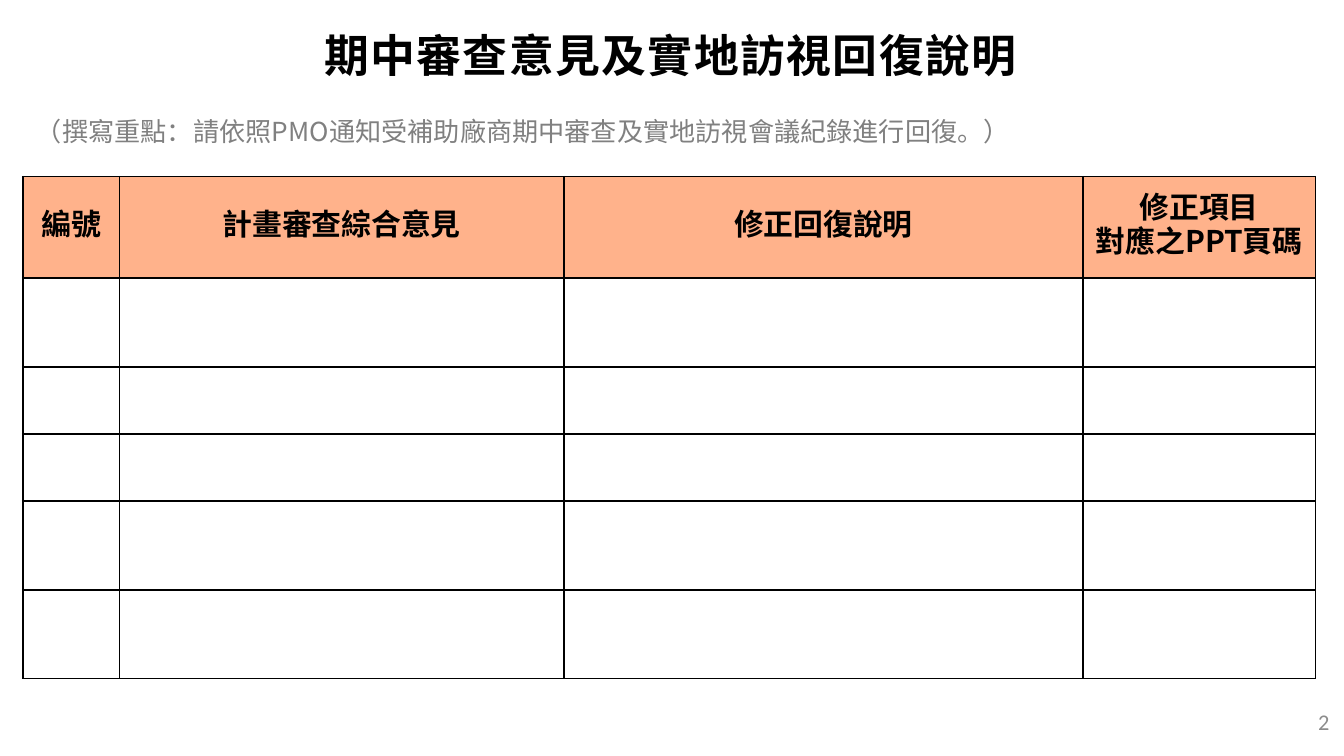
"""Build the interim review response slide with its blank reply table."""
from lxml.etree import SubElement
from pptx import Presentation
from pptx.dml.color import RGBColor
from pptx.enum.text import MSO_ANCHOR, MSO_AUTO_SIZE, PP_ALIGN
from pptx.oxml.ns import qn
from pptx.util import Pt

BLACK = RGBColor(0x00, 0x00, 0x00)
GRAY = RGBColor(0x80, 0x80, 0x80)
PAGE_GRAY = RGBColor(0x8C, 0x8C, 0x8C)
PEACH = RGBColor(0xFF, 0xB2, 0x8B)
CJK = "Noto Sans CJK SC"


def add_run(paragraph, text, size, color, bold=False, typeface=CJK):
    run = paragraph.add_run()
    run.text = text
    run.font.size = Pt(size)
    run.font.bold = bold
    run.font.color.rgb = color
    run.font.name = typeface
    SubElement(run.font._element, qn("a:ea"), typeface=typeface)
    return run


def add_borders(cell):
    properties = cell._tc.get_or_add_tcPr()
    for position, side in enumerate(("a:lnL", "a:lnR", "a:lnT", "a:lnB")):
        border = SubElement(properties, qn(side), w=str(Pt(1)))
        fill = SubElement(border, qn("a:solidFill"))
        SubElement(fill, qn("a:srgbClr"), val=str(BLACK))
        properties.insert(position, border)


prs = Presentation()
prs.slide_width, prs.slide_height = Pt(720), Pt(405)
slide = prs.slides.add_slide(prs.slide_layouts[6])

page_number = slide.shapes.add_textbox(Pt(557.3), Pt(375.8), Pt(162), Pt(21.6)).text_frame
page_number.word_wrap = True
page_number.vertical_anchor = MSO_ANCHOR.MIDDLE
page_number.paragraphs[0].alignment = PP_ALIGN.RIGHT
add_run(page_number.paragraphs[0], "2", 12, PAGE_GRAY, typeface="Calibri")

guidance = slide.shapes.add_textbox(Pt(12.2), Pt(58.3), Pt(692.6), Pt(24.5)).text_frame
guidance.word_wrap = True
guidance.auto_size = MSO_AUTO_SIZE.SHAPE_TO_FIT_TEXT
add_run(guidance.paragraphs[0],
        "（撰寫重點：請依照PMO通知受補助廠商期中審查及實地訪視會議紀錄進行回復。）", 14, GRAY)

title = slide.shapes.add_textbox(Pt(-0.7), Pt(-1.4), Pt(720), Pt(61.2)).text_frame
title.word_wrap = True
title.vertical_anchor = MSO_ANCHOR.MIDDLE
title.margin_left = title.margin_right = Pt(5)
title.margin_top = title.margin_bottom = Pt(2.9)
title.paragraphs[0].alignment = PP_ALIGN.CENTER
title_run = add_run(title.paragraphs[0], "期中審查意見及實地訪視回復說明", 24, BLACK, bold=True)
title_run.font._element.set("spc", "80")

columns = [
    (51.8, ["編號"], 1.4),
    (238.3, ["計畫審查綜合意見"], 1.4),
    (277.9, ["修正回復說明"], 1.4),
    (124.6, ["修正項目", "對應之PPT頁碼"], 0.7),
]
row_heights = [54.5, 47.5, 36, 36, 47.5, 47.5]
replies = slide.shapes.add_table(
    len(row_heights), len(columns), Pt(12.2), Pt(94.6), Pt(692.6), Pt(sum(row_heights))).table
replies.first_row = replies.horz_banding = False

for row, height in zip(replies.rows, row_heights):
    row.height = Pt(height)
    for cell in row.cells:
        cell.fill.background()
        add_borders(cell)

for index, (width, heading, margin) in enumerate(columns):
    replies.columns[index].width = Pt(width)
    header = replies.cell(0, index)
    header.fill.solid()
    header.fill.fore_color.rgb = PEACH
    header.vertical_anchor = MSO_ANCHOR.MIDDLE
    header.margin_left = header.margin_right = Pt(margin)
    header.margin_top = header.margin_bottom = Pt(0)
    for number, line in enumerate(heading):
        frame = header.text_frame
        paragraph = frame.add_paragraph() if number else frame.paragraphs[0]
        paragraph.alignment = PP_ALIGN.CENTER
        paragraph.line_spacing = Pt(18)
        add_run(paragraph, line, 16, BLACK, bold=True)

prs.save("out.pptx")
